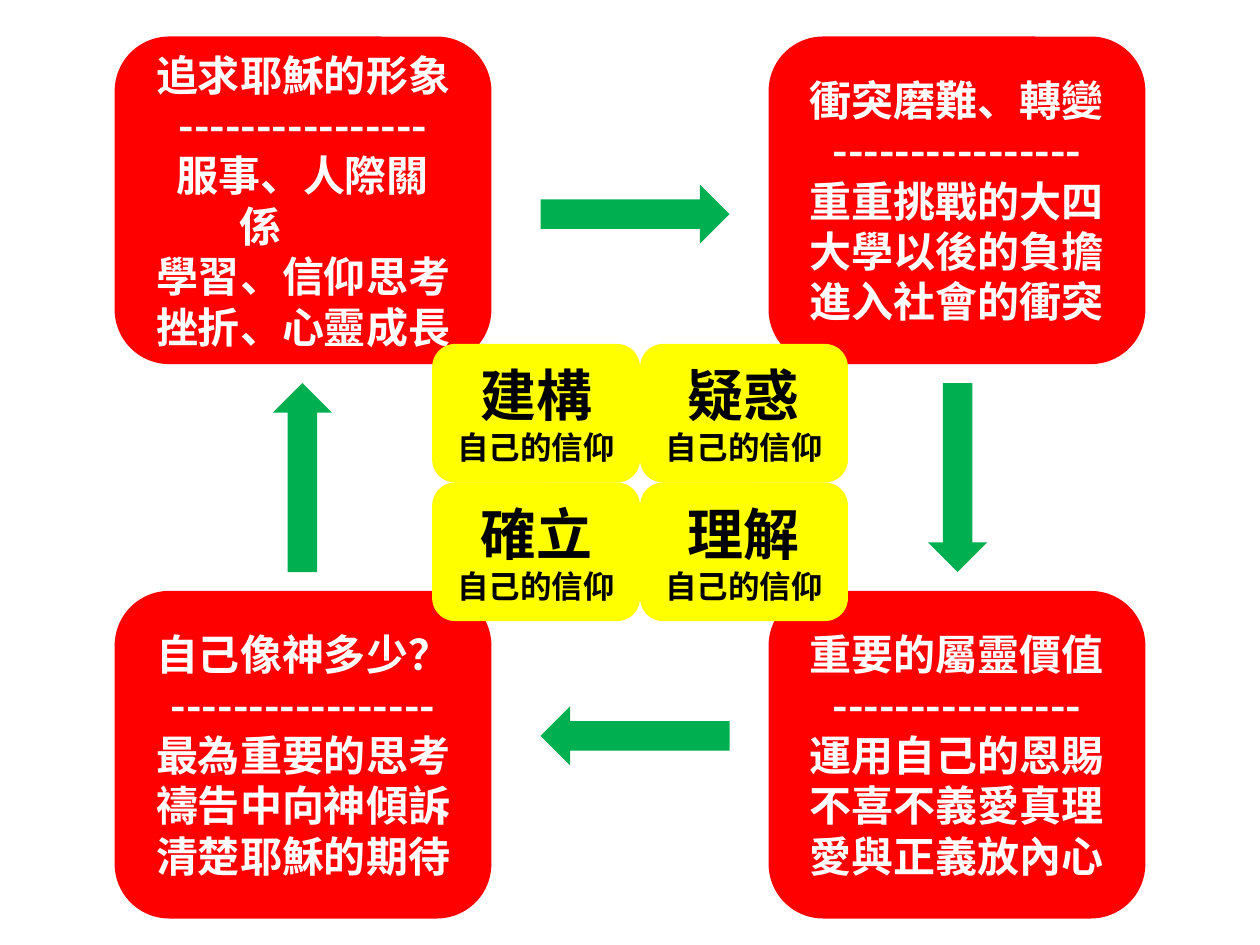
from lxml import etree
from pptx import Presentation, util as u
from pptx.dml.color import RGBColor
from pptx.enum import shapes, text
from pptx.oxml.ns import qn

FONT = "Noto Sans CJK SC"
RED, GREEN, YELLOW = "FF0000", "00B050", "FFFF00"
WHITE, BLACK = "FFFFFF", "000000"

# Grids: left and top of the first cell, step to the next, size of a cell
CARD_GRID = dict(origin=(0.91, 0.29), step=(5.19, 4.4), size=(2.99, 2.6))
TILE_GRID = dict(origin=(3.43, 2.73), step=(1.65, 1.1), size=(1.65, 1.1))
ARROW_SIZE = (1.5, 0.47)

# (column, row), lines of the card
CARDS = [
    ((0, 0), ["追求耶穌的形象", "-" * 16, "服事、人際關係　　", "學習、信仰思考", "挫折、心靈成長"]),
    ((1, 0), ["衝突磨難、轉變", "-" * 16, "重重挑戰的大四", "大學以後的負擔", "進入社會的衝突"]),
    ((0, 1), ["自己像神多少？", "-" * 17, "最為重要的思考", "禱告中向神傾訴", "清楚耶穌的期待"]),
    ((1, 1), ["重要的屬靈價值", "-" * 16, "運用自己的恩賜", "不喜不義愛真理", "愛與正義放內心"]),
]
# (column, row), stage of faith
TILES = [((0, 0), "建構"), ((1, 0), "疑惑"), ((1, 1), "理解"), ((0, 1), "確立")]
# Centres of the arrows, clockwise from the top; each turns a further 90 degrees
ARROW_CENTRES = [(5.04, 1.7), (7.6, 3.79), (5.04, 5.84), (2.4, 3.79)]


def colour(hex_code):
    return RGBColor.from_string(hex_code)


def grid_cell(cell, origin, step, size):
    left, top = (start + index * gap for start, index, gap in zip(origin, cell, step))
    return left, top, *size


def add_block(page, kind, bounds, fill):
    block = page.shapes.add_shape(kind, *(u.Inches(length) for length in bounds))
    block.shadow.inherit = False
    block.fill.solid()
    block.fill.fore_color.rgb = colour(fill)
    block.line.fill.background()
    return block


def write_line(para, words, size, color):
    para.alignment = text.PP_ALIGN.CENTER
    span = para.add_run()
    span.text = words
    span.font.name = FONT
    span.font.size = u.Pt(size)
    span.font.bold = True
    span.font.color.rgb = colour(color)
    # East Asian letters take their font from a:ea
    etree.SubElement(span.font._element, qn("a:ea"), typeface=FONT)


def add_rounded_box(page, bounds, fill, lines, sizes, color):
    box = add_block(page, shapes.MSO_SHAPE.ROUNDED_RECTANGLE, bounds, fill)
    frame = box.text_frame
    frame.word_wrap = True
    frame.vertical_anchor = text.MSO_ANCHOR.MIDDLE
    for index, (words, size) in enumerate(zip(lines, sizes)):
        para = frame.add_paragraph() if index else frame.paragraphs[0]
        write_line(para, words, size, color)


def add_arrow(page, centre, rotation):
    corner = [middle - length / 2 for middle, length in zip(centre, ARROW_SIZE)]
    arrow = add_block(page, shapes.MSO_SHAPE.RIGHT_ARROW, (*corner, *ARROW_SIZE), GREEN)
    arrow.rotation = rotation


def main():
    deck = Presentation()
    deck.slide_width, deck.slide_height = u.Inches(10), u.Inches(7.5)
    page = deck.slides.add_slide(deck.slide_layouts[6])

    # Outer cards
    for cell, lines in CARDS:
        add_rounded_box(page, grid_cell(cell, **CARD_GRID), RED, lines, [24] * len(lines), WHITE)

    # Cycle of arrows
    for turn, centre in enumerate(ARROW_CENTRES):
        add_arrow(page, centre, 90 * turn)

    # Central tiles
    for cell, stage in TILES:
        add_rounded_box(page, grid_cell(cell, **TILE_GRID), YELLOW,
                        [stage, "自己的信仰"], [32, 18], BLACK)

    deck.save("out.pptx")


if __name__ == "__main__":
    main()
